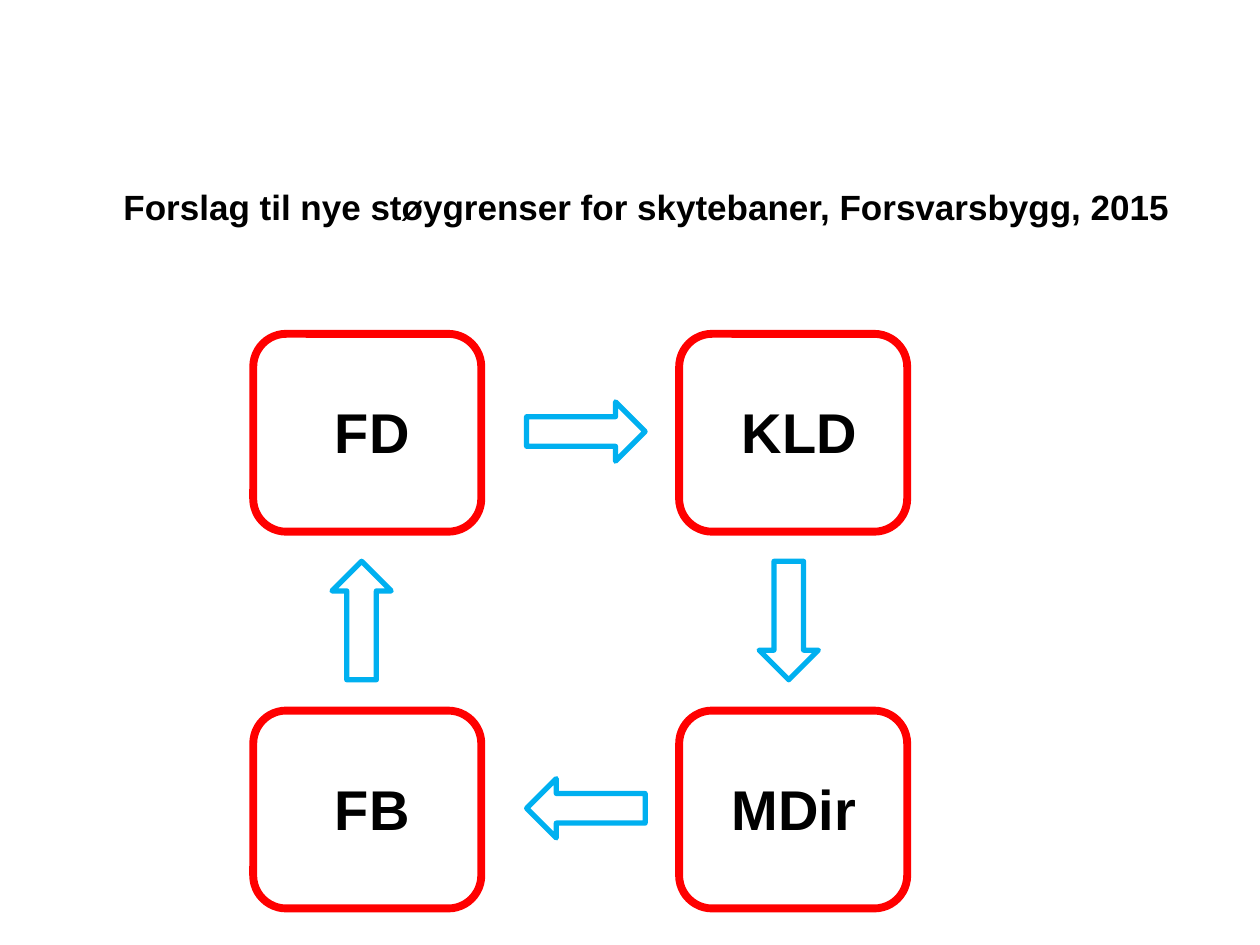
from dataclasses import dataclass

from pptx import Presentation
from pptx.dml.color import RGBColor
from pptx.enum.shapes import MSO_SHAPE
from pptx.util import Inches, Pt

ROUNDED = MSO_SHAPE.ROUNDED_RECTANGLE
ARROW = MSO_SHAPE.RIGHT_ARROW

BLACK = RGBColor(0x00, 0x00, 0x00)
RED = RGBColor(0xFF, 0x00, 0x00)
BLUE = RGBColor(0x00, 0xB0, 0xF0)

# Grid of the cycle, in inches
COLUMNS = (2.01, 5.39)
ROWS = (2.65, 5.64)
BOX_WIDTH, BOX_HEIGHT = 1.81, 1.57
ARROW_WIDTH, ARROW_HEIGHT = 0.94, 0.47
LABEL_DROP, LABEL_HEIGHT = 0.46, 0.64


@dataclass(frozen=True)
class Agency:
    name: str
    column: int
    row: int
    label_left: float
    label_width: float


@dataclass(frozen=True)
class Step:
    left: float
    top: float
    rotation: int


AGENCIES = (
    Agency("FD", 0, 0, 2.56, 0.87),
    Agency("KLD", 1, 0, 5.79, 1.18),
    Agency("FB", 0, 1, 2.56, 0.87),
    Agency("MDir", 1, 1, 5.71, 1.26),
)
STEPS = (
    Step(4.18, 3.19, 0),
    Step(5.79, 4.69, 90),
    Step(4.18, 6.18, 180),
    Step(2.40, 4.69, 270),
)


def add_outline(page, kind, left: float, top: float, width: float,
                height: float, color: RGBColor, weight: float):
    """Draw an unfilled preset shape."""
    shape = page.shapes.add_shape(
        kind, Inches(left), Inches(top), Inches(width), Inches(height))
    shape.shadow.inherit = False
    shape.fill.background()
    shape.line.color.rgb = color
    shape.line.width = Pt(weight)
    return shape


def add_text(page, text: str, left: float, top: float, width: float,
             height: float, size: int, **margins):
    """Write one bold line of text."""
    box = page.shapes.add_textbox(
        Inches(left), Inches(top), Inches(width), Inches(height))
    frame = box.text_frame
    frame.word_wrap = True
    for name, value in margins.items():
        setattr(frame, name, value)
    span = frame.paragraphs[0].add_run()
    span.text = text
    font_format = {"name": "Arial", "size": Pt(size), "bold": True}
    for name, value in font_format.items():
        setattr(span.font, name, value)
    span.font.color.rgb = BLACK


def add_agency(page, agency: Agency) -> None:
    top = ROWS[agency.row]
    add_outline(page, ROUNDED, COLUMNS[agency.column], top,
                BOX_WIDTH, BOX_HEIGHT, RED, 4.5)
    add_text(page, agency.name, agency.label_left, top + LABEL_DROP,
             agency.label_width, LABEL_HEIGHT, 32)


def add_step(page, step: Step) -> None:
    arrow = add_outline(page, ARROW, step.left, step.top,
                        ARROW_WIDTH, ARROW_HEIGHT, BLUE, 3)
    arrow.rotation = step.rotation


def main() -> None:
    deck = Presentation()
    deck.slide_width, deck.slide_height = Inches(10), Inches(7.5)
    page = deck.slides.add_slide(deck.slide_layouts[6])

    # Title
    add_text(page, "Forslag til nye støygrenser for skytebaner, Forsvarsbygg, 2015",
             0.98, 1.47, 8.69, 0.4, 20,
             margin_left=0, margin_top=0, margin_right=0, margin_bottom=0)

    # Agencies and the arrows between them
    for agency in AGENCIES:
        add_agency(page, agency)
    for step in STEPS:
        add_step(page, step)

    deck.save("out.pptx")


if __name__ == "__main__":
    main()
